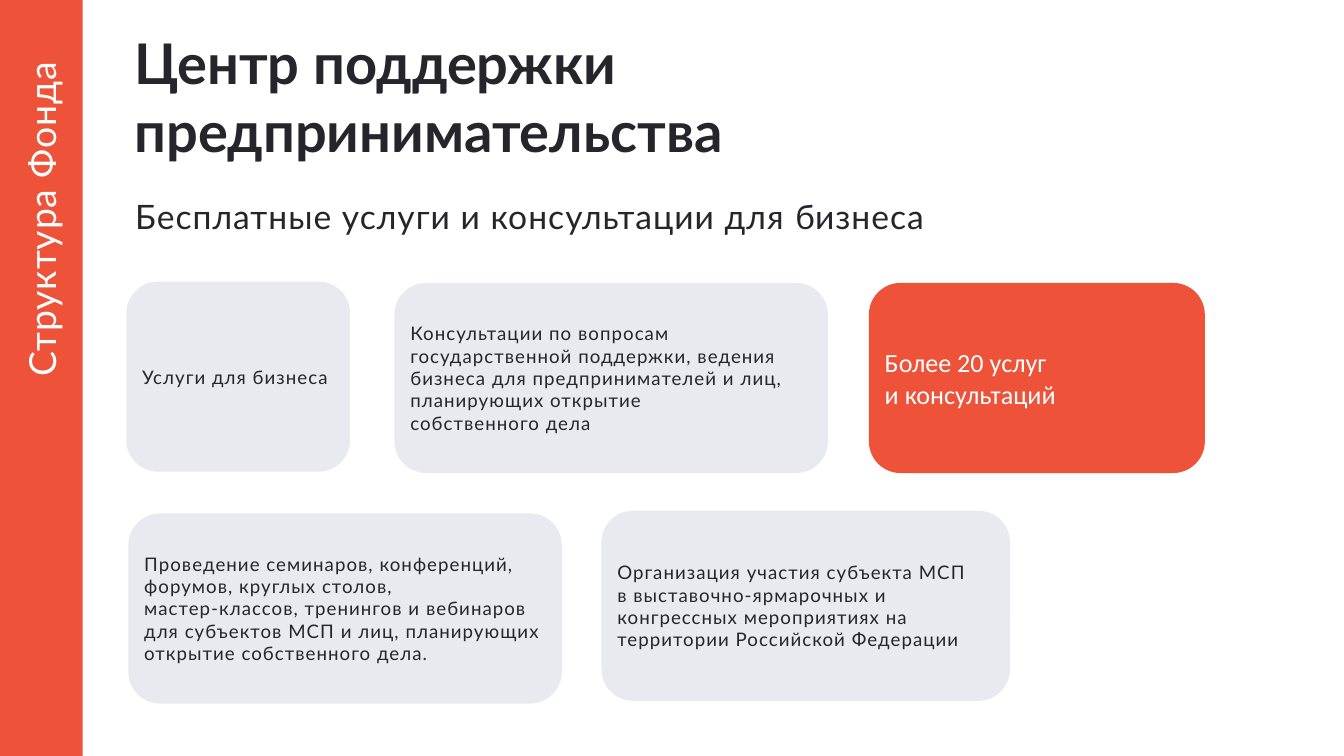
from pptx import Presentation
from pptx.dml.color import RGBColor
from pptx.enum.shapes import MSO_SHAPE
from pptx.enum.text import MSO_ANCHOR, MSO_AUTO_SIZE, PP_ALIGN
from pptx.util import Emu, Pt

EMU_PER_PX = 9144
INK, WHITE, ORANGE, PALE = "25252B", "FFFFFF", "EE5238", "E9E9F0"

SERVICE_CARDS = [
    ((188, 419, 333, 283), "Услуги для бизнеса"),
    ((587, 421, 645, 283),
     "Консультации по вопросам государственной поддержки, ведения бизнеса "
     "для предпринимателей и лиц, планирующих открытие \nсобственного дела"),
    ((191, 764, 645, 283),
     "Проведение семинаров, конференций, форумов, круглых столов, \n"
     "мастер-классов, тренингов и вебинаров для субъектов МСП и лиц, "
     "планирующих открытие собственного дела."),
    ((895, 760, 608, 283),
     "Организация участия субъекта МСП \nв выставочно-ярмарочных и "
     "конгрессных мероприятиях на территории Российской Федерации"),
]


def px(length):
    """Turn a length in px into EMU."""
    return Emu(length * EMU_PER_PX)


def colour(value):
    """Turn a hex string into a colour."""
    return RGBColor.from_string(value)


def set_margins(frame, left, top, right, bottom):
    """Set the inner margins of a text frame in px."""
    frame.margin_left, frame.margin_top = px(left), px(top)
    frame.margin_right, frame.margin_bottom = px(right), px(bottom)


def set_font(para, size, ink, name="Lato", bold=False):
    """Format a left-aligned paragraph."""
    para.alignment = PP_ALIGN.LEFT
    para.font.size = Pt(size)
    para.font.name = name
    para.font.bold = bold
    para.font.color.rgb = colour(ink)


def set_tracking(span, points):
    """Set the letter spacing of a run."""
    span._r.get_or_add_rPr().set("spc", str(round(points * 100)))


def add_title(page, text):
    """Place and format the slide title."""
    title = page.shapes.title
    title.left, title.top, title.width, title.height = map(px, (200, 43, 1567, 202))
    frame = title.text_frame
    frame.text = text
    frame.word_wrap = True
    frame.auto_size = MSO_AUTO_SIZE.SHAPE_TO_FIT_TEXT
    frame.vertical_anchor = MSO_ANCHOR.TOP
    set_margins(frame, 0, 0, 0, 0)
    set_font(frame.paragraphs[0], 60, INK, bold=True)


def add_label(page, area, spans, size, ink, margins):
    """Add a text box of (text, tracking) runs."""
    box = page.shapes.add_textbox(*map(px, area))
    frame = box.text_frame
    frame.word_wrap = True
    frame.auto_size = MSO_AUTO_SIZE.SHAPE_TO_FIT_TEXT
    set_margins(frame, *margins)
    para = frame.paragraphs[0]
    for text, tracking in spans:
        span = para.add_run()
        span.text = text
        set_tracking(span, tracking)
    set_font(para, size, ink)
    return box


def add_panel(page, kind, area, fill):
    """Add a plain filled shape without outline or shadow."""
    panel = page.shapes.add_shape(kind, *map(px, area))
    panel.shadow.inherit = False
    panel.fill.solid()
    panel.fill.fore_color.rgb = colour(fill)
    panel.line.fill.background()
    return panel


def add_card(page, area, text, fill=PALE, ink=INK, size=20, name="Lato", tracking=1.1):
    """Add a rounded card with text centred vertically."""
    card = add_panel(page, MSO_SHAPE.ROUNDED_RECTANGLE, area, fill)
    frame = card.text_frame
    frame.word_wrap = True
    frame.vertical_anchor = MSO_ANCHOR.MIDDLE
    para = frame.paragraphs[0]
    para.text = text
    set_font(para, size, ink, name)
    for span in para.runs:
        set_tracking(span, tracking)


def main():
    """Build the slide and save the deck."""
    deck = Presentation()
    deck.slide_width, deck.slide_height = px(2000), px(1125)
    page = deck.slides.add_slide(deck.slide_layouts[5])

    add_title(page, "Центр поддержки предпринимательства")
    subtitle = add_label(
        page, (201, 304, 1335, 48),
        [("Бесплатные услуги и консультации для ", 1.1), ("б", 0), ("изнеса", 1.1)],
        36, INK, (0, 0, 0, 0))
    subtitle.text_frame.paragraphs[0].line_spacing = Pt(34.3)

    add_panel(page, MSO_SHAPE.RECTANGLE, (0, 0, 123, 1125), ORANGE)
    section = add_label(page, (-222, 287, 567, 77), [("Структура Фонда", 1)],
                        40, WHITE, (49, 5, 10, 5))
    section.rotation = 270

    for area, text in SERVICE_CARDS:
        add_card(page, area, text)
    add_card(page, (1293, 421, 500, 283), "Более 20 услуг \nи консультаций",
             ORANGE, WHITE, 28, "Calibri", 0)
    deck.save("out.pptx")


if __name__ == "__main__":
    main()
